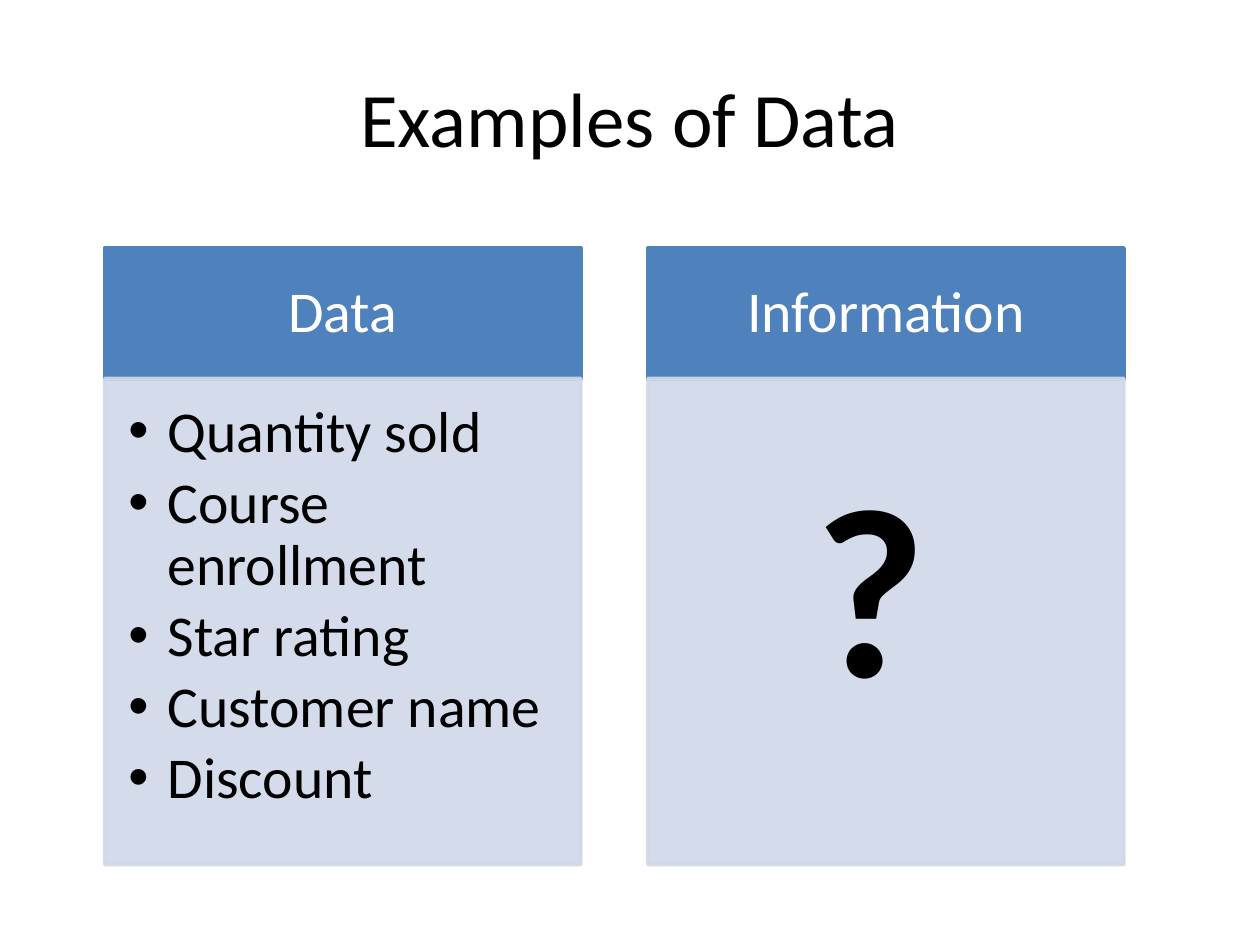
"""Build the slide that sets examples of data against information."""
from dataclasses import dataclass

from pptx import Presentation
from pptx.dml.color import RGBColor
from pptx.enum.shapes import MSO_SHAPE
from pptx.enum.text import MSO_ANCHOR, MSO_AUTO_SIZE, PP_ALIGN
from pptx.oxml.ns import qn
from pptx.shapes.base import BaseShape
from pptx.slide import Slide
from pptx.text.text import TextFrame
from pptx.util import Cm, Pt
from lxml import etree

RECTANGLE = MSO_SHAPE.RECTANGLE
MIDDLE, TOP = MSO_ANCHOR.MIDDLE, MSO_ANCHOR.TOP
NO_AUTOFIT, GROW = MSO_AUTO_SIZE.NONE, MSO_AUTO_SIZE.SHAPE_TO_FIT_TEXT
CENTER = PP_ALIGN.CENTER

BLUE = RGBColor(0x4F, 0x81, 0xBD)
PALE_BLUE = RGBColor(0xD0, 0xD8, 0xE8)
BLACK = RGBColor(0, 0, 0)
WHITE = RGBColor(0xFF, 0xFF, 0xFF)
FONT = "Calibri"


@dataclass(frozen=True)
class Box:
    left: float
    top: float
    width: float
    height: float


@dataclass(frozen=True)
class Column:
    heading: str
    left: float

    @property
    def header(self) -> Box:
        return Box(self.left, 5, 9.6, 2.64)

    @property
    def panel(self) -> Box:
        return Box(self.left, 7.63, 9.6, 9.8)


DATA = Column("Data", 2.11)
INFORMATION = Column("Information", 13.06)
DATA_EXAMPLES = ["Quantity sold", "Course enrollment", "Star rating",
                 "Customer name", "Discount"]


def place(shape: BaseShape, box: Box) -> None:
    shape.left, shape.top = Cm(box.left), Cm(box.top)
    shape.width, shape.height = Cm(box.width), Cm(box.height)


def paint(shape: BaseShape, color: RGBColor, opacity: int = 100) -> None:
    shape.fill.solid()
    shape.fill.fore_color.rgb = color
    shape.line.color.rgb = color
    shape.line.width = Pt(2)
    shape.shadow.inherit = False
    if opacity < 100:
        for solid in shape.fill._xPr.iter(qn("a:srgbClr")):
            etree.SubElement(solid, qn("a:alpha")).set("val", str(opacity * 1000))


def add_rectangle(slide: Slide, box: Box) -> BaseShape:
    rectangle = slide.shapes.add_shape(RECTANGLE, 0, 0, 0, 0)
    place(rectangle, box)
    return rectangle


def set_margins(frame: TextFrame, left: float, top: float, right: float, bottom: float) -> None:
    frame.margin_left, frame.margin_top = Cm(left), Cm(top)
    frame.margin_right, frame.margin_bottom = Cm(right), Cm(bottom)


def write(frame: TextFrame, lines: list[str], size: int, color: RGBColor) -> None:
    frame.text = "\n".join(lines)
    for paragraph in frame.paragraphs:
        paragraph.font.name = FONT
        paragraph.font.size = Pt(size)
        paragraph.font.color.rgb = color


def add_header(slide: Slide, column: Column) -> None:
    header = add_rectangle(slide, column.header)
    paint(header, BLUE)
    frame = header.text_frame
    frame.word_wrap = True
    frame.vertical_anchor = MIDDLE
    set_margins(frame, 0.66, 0.38, 0.66, 0.38)
    write(frame, [column.heading], 33, WHITE)
    frame.paragraphs[0].alignment = CENTER
    frame.paragraphs[0].line_spacing = 0.9


def fill_list(examples: BaseShape, column: Column) -> None:
    place(examples, column.panel)
    paint(examples, PALE_BLUE, 90)
    frame = examples.text_frame
    frame.auto_size = NO_AUTOFIT
    frame.vertical_anchor = TOP
    set_margins(frame, 0.48, 0.48, 0.66, 0.74)
    write(frame, DATA_EXAMPLES, 33, BLACK)
    for paragraph in frame.paragraphs:
        paragraph.line_spacing = 0.9
        paragraph.space_before = Pt(0)
        paragraph.space_after = Pt(5)
        properties = paragraph._p.get_or_add_pPr()
        properties.set("marL", str(Cm(0.79)))
        properties.set("indent", str(Cm(-0.79)))


def add_question(slide: Slide, box: Box) -> None:
    question = slide.shapes.add_textbox(0, 0, 0, 0)
    place(question, box)
    frame = question.text_frame
    frame.word_wrap = False
    frame.auto_size = GROW
    write(frame, ["?"], 138, BLACK)
    frame.paragraphs[0].font.bold = True


def main() -> None:
    presentation = Presentation()
    presentation.slide_width, presentation.slide_height = Cm(25.4), Cm(19.05)
    slide = presentation.slides.add_slide(presentation.slide_layouts[1])
    title, examples = slide.placeholders

    place(title, Box(1.27, 0.76, 22.86, 3.18))
    title.text_frame.vertical_anchor = MIDDLE
    write(title.text_frame, ["Examples of Data"], 44, BLACK)
    title.text_frame.paragraphs[0].alignment = CENTER

    add_header(slide, DATA)
    fill_list(examples, DATA)
    slide.shapes._spTree.append(examples._element)

    add_header(slide, INFORMATION)
    paint(add_rectangle(slide, INFORMATION.panel), PALE_BLUE, 90)
    add_question(slide, Box(16.18, 8.66, 3.51, 6.15))

    presentation.save("out.pptx")


if __name__ == "__main__":
    main()
